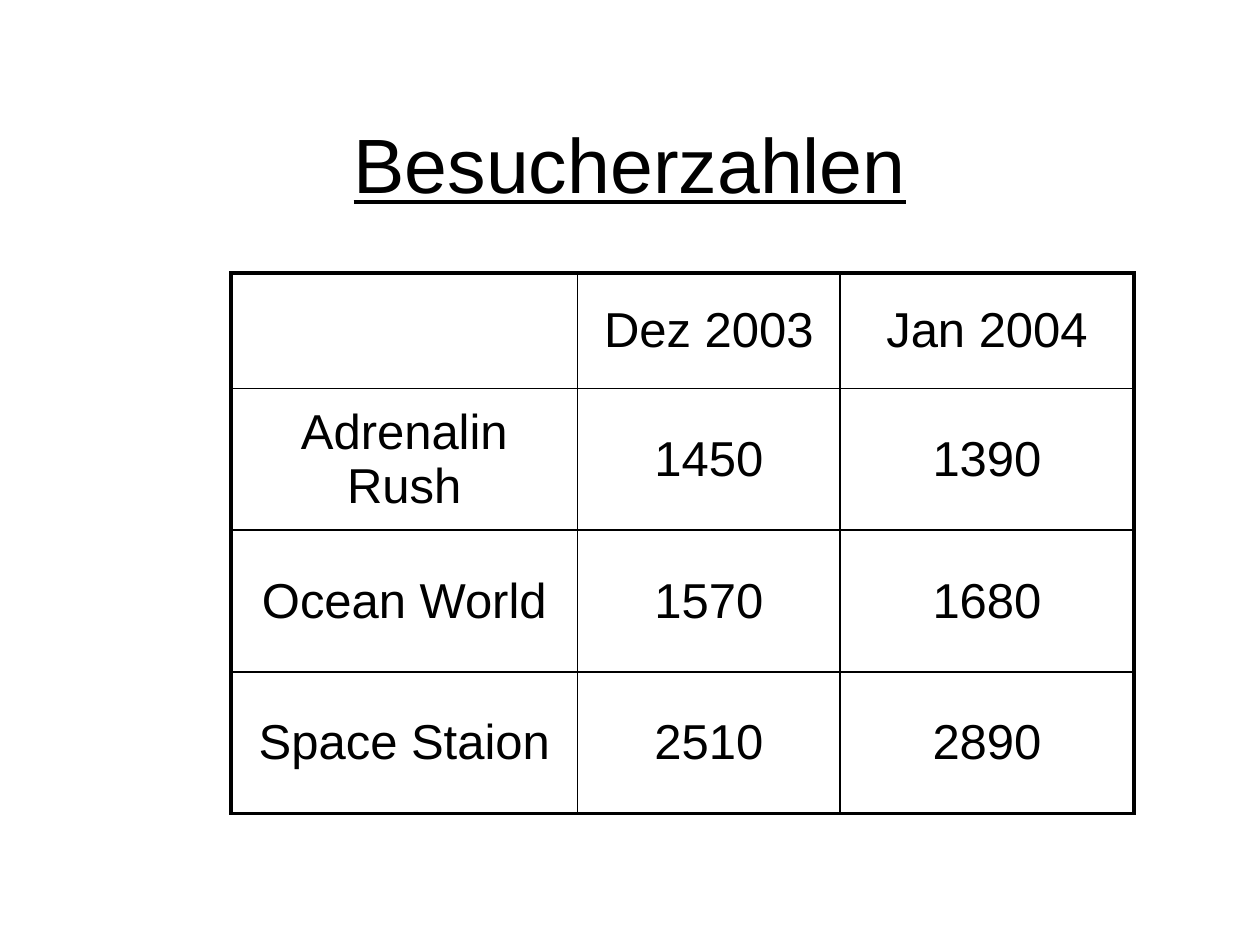
import dataclasses

import lxml.etree
import pptx
import pptx.dml.color
import pptx.enum.text
import pptx.oxml.ns
import pptx.util


@dataclasses.dataclass(frozen=True)
class Theme:
    font: str = "Arial"
    ink: str = "000000"
    paper: str = "FFFFFF"
    title_size: int = 44
    table_size: int = 28
    outer_line: float = 2.25
    inner_line: float = 1


def px(length):
    return pptx.util.Emu(length * 9525)


class SlideBuilder:
    def __init__(self, deck, theme):
        self.theme = theme
        self.slide = deck.slides.add_slide(deck.slide_layouts[6])
        fill = self.slide.background.fill
        fill.solid()
        fill.fore_color.rgb = pptx.dml.color.RGBColor.from_string(theme.paper)

    def add_text(self, frame, text, size, underline=False):
        para = frame.paragraphs[0]
        para.alignment = pptx.enum.text.PP_ALIGN.CENTER
        span = para.add_run()
        span.text = text
        span.font.name = self.theme.font
        span.font.size = pptx.util.Pt(size)
        span.font.underline = underline
        span.font.color.rgb = pptx.dml.color.RGBColor.from_string(self.theme.ink)

    def add_title(self, text, left, top, width, height):
        box = self.slide.shapes.add_textbox(px(left), px(top), px(width), px(height))
        frame = box.text_frame
        frame.word_wrap = True
        frame.vertical_anchor = pptx.enum.text.MSO_ANCHOR.MIDDLE
        self.add_text(frame, text, self.theme.title_size, underline=True)

    def add_borders(self, cell, outer_sides):
        qn = pptx.oxml.ns.qn
        properties = cell._tc.get_or_add_tcPr()
        for position, side in enumerate("LRTB"):
            points = self.theme.outer_line if side in outer_sides else self.theme.inner_line
            line = lxml.etree.Element(qn(f"a:ln{side}"), w=str(int(pptx.util.Pt(points))))
            fill = lxml.etree.SubElement(line, qn("a:solidFill"))
            lxml.etree.SubElement(fill, qn("a:srgbClr"), val=self.theme.ink)
            properties.insert(position, line)

    def add_grid(self, rows, left, top, widths, heights):
        frame = self.slide.shapes.add_table(
            len(heights), len(widths), px(left), px(top), px(sum(widths)), px(sum(heights))
        )
        table = frame.table
        table.first_row = False
        table.horz_banding = False
        for column, width in zip(table.columns, widths):
            column.width = px(width)
        for row, height in zip(table.rows, heights):
            row.height = px(height)
        for row_index, texts in enumerate(rows):
            for column_index, text in enumerate(texts):
                cell = table.cell(row_index, column_index)
                cell.vertical_anchor = pptx.enum.text.MSO_ANCHOR.MIDDLE
                cell.fill.background()
                edges = {
                    "L": column_index == 0,
                    "R": column_index == len(widths) - 1,
                    "T": row_index == 0,
                    "B": row_index == len(heights) - 1,
                }
                self.add_borders(cell, [side for side, outer in edges.items() if outer])
                if text:
                    self.add_text(cell.text_frame, text, self.theme.table_size)


def main():
    deck = pptx.Presentation()
    deck.slide_width, deck.slide_height = px(960), px(720)
    page = SlideBuilder(deck, Theme())
    page.add_title("Besucherzahlen", 72, 64, 816, 120)
    visitors = [
        ["", "Dez 2003", "Jan 2004"],
        ["Adrenalin Rush", "1450", "1390"],
        ["Ocean World", "1570", "1680"],
        ["Space Staion", "2510", "2890"],
    ]
    page.add_grid(visitors, 176, 208, [264, 200, 224], [88, 108, 108, 108])
    deck.save("out.pptx")


if __name__ == "__main__":
    main()
